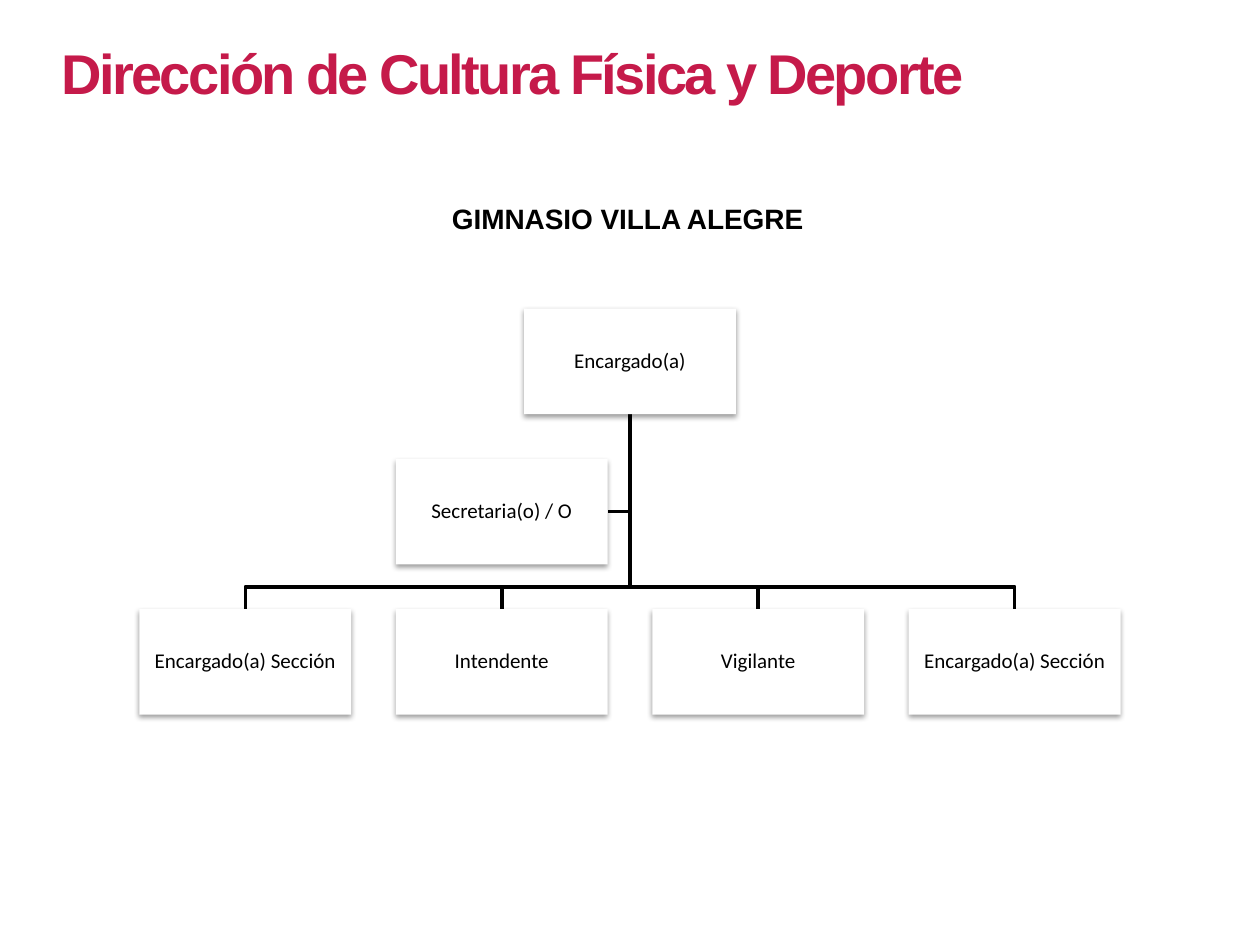
from lxml import etree
from pptx import Presentation
from pptx.dml.color import RGBColor
from pptx.enum.shapes import MSO_SHAPE
from pptx.enum.text import MSO_ANCHOR, MSO_AUTO_SIZE, PP_ALIGN
from pptx.oxml import parse_xml
from pptx.util import Cm, Pt

RECT = MSO_SHAPE.RECTANGLE
MIDDLE = MSO_ANCHOR.MIDDLE
CENTER = PP_ALIGN.CENTER
GROW = MSO_AUTO_SIZE.SHAPE_TO_FIT_TEXT
NS = "http://schemas.openxmlformats.org/drawingml/2006/main"

BLACK, WHITE, RED = "000000", "FFFFFF", "C51A4A"
AXIS = 12.7
PITCH = 5.17
WIDE, HIGH = 4.27, 2.13
TOP, STEP = 6.22, 3.03
STAFF = ["Encargado(a) Sección", "Intendente", "Vigilante", "Encargado(a) Sección"]


def color(code):
    """Turn a hex string into a colour."""
    return RGBColor.from_string(code)


def style(para, face, size, code, bold=False):
    """Set the font of a paragraph."""
    font = para.font
    font.name, font.size, font.bold = face, Pt(size), bold
    font.color.rgb = color(code)


def label(slide, text, left, top, width, height, size, code, wrap=True):
    """Add a bold heading and return its paragraph."""
    box = slide.shapes.add_textbox(Cm(left), Cm(top), Cm(width), Cm(height))
    frame = box.text_frame
    frame.word_wrap, frame.auto_size = wrap, GROW
    frame.text = text
    para = frame.paragraphs[0]
    style(para, "Arial", size, code, True)
    return para


def tighten(para, points):
    """Set the letter spacing of a paragraph's runs."""
    for run in para.runs:
        run.font._element.set("spc", str(round(points * 100)))


def shade(shape):
    """Give a shape a soft shadow below it."""
    old = shape._element.spPr.find(f"{{{NS}}}effectLst")
    if old is not None:
        shape._element.spPr.remove(old)
    effect = etree.tostring(etree.Element(f"{{{NS}}}effectLst", nsmap={"a": NS}))
    node = parse_xml(effect)
    shadow = etree.SubElement(
        node, f"{{{NS}}}outerShdw", blurRad=str(Pt(3.1)), dist=str(Pt(1.6)),
        dir="5400000", rotWithShape="0")
    tint = etree.SubElement(shadow, f"{{{NS}}}srgbClr", val=BLACK)
    etree.SubElement(tint, f"{{{NS}}}alpha", val="38000")
    shape._element.spPr.append(node)


def card(slide, text, mid, top):
    """Add a chart box centred on a column."""
    shape = slide.shapes.add_shape(
        RECT, Cm(mid - WIDE / 2), Cm(top), Cm(WIDE), Cm(HIGH))
    shape.fill.solid()
    shape.fill.fore_color.rgb = color(WHITE)
    shape.line.fill.background()
    shade(shape)
    frame = shape.text_frame
    frame.word_wrap, frame.vertical_anchor = True, MIDDLE
    frame.margin_left = frame.margin_right = Cm(0.02)
    frame.margin_top = frame.margin_bottom = Cm(0.02)
    frame.text = text
    para = frame.paragraphs[0]
    para.alignment, para.line_spacing, para.space_after = CENTER, 0.9, Pt(4.2)
    style(para, "Calibri", 12, BLACK)


def branch(slide, *points):
    """Draw an open bent line through the points."""
    spots = [(Cm(x), Cm(y)) for x, y in points]
    path = slide.shapes.build_freeform(*spots[0])
    path.add_line_segments(spots[1:], close=False)
    shape = path.convert_to_shape()
    shape.shadow.inherit = False
    shape.fill.background()
    shape.line.color.rgb = color(BLACK)
    shape.line.width = Pt(2)


def chart(slide):
    """Draw the branches, then the boxes."""
    foot = TOP + HIGH
    aide, base = TOP + STEP, TOP + 2 * STEP
    bus = base - (STEP - HIGH) / 2
    mids = [AXIS + (i - 1.5) * PITCH for i in range(len(STAFF))]
    level = aide + HIGH / 2
    branch(slide, (AXIS, foot), (AXIS, level), (mids[1] + WIDE / 2, level))
    for mid in reversed(mids):
        branch(slide, (AXIS, foot), (AXIS, bus), (mid, bus), (mid, base))
    card(slide, "Encargado(a)", AXIS, TOP)
    for text, mid in zip(STAFF, mids):
        card(slide, text, mid, base)
    card(slide, "Secretaria(o) / O", mids[1], aide)


def main():
    """Build and save the slide."""
    deck = Presentation()
    deck.slide_width, deck.slide_height = Cm(25.4), Cm(19.05)
    slide = deck.slides.add_slide(deck.slide_layouts[6])
    label(slide, "GIMNASIO VILLA ALEGRE", 8.86, 3.94, 7.7, 0.94, 16, BLACK, False)
    title = label(slide, "Dirección de Cultura Física y Deporte",
                  0.99, 0.66, 19.53, 1.63, 32, RED)
    tighten(title, -1.5)
    chart(slide)
    deck.save("out.pptx")


if __name__ == "__main__":
    main()
